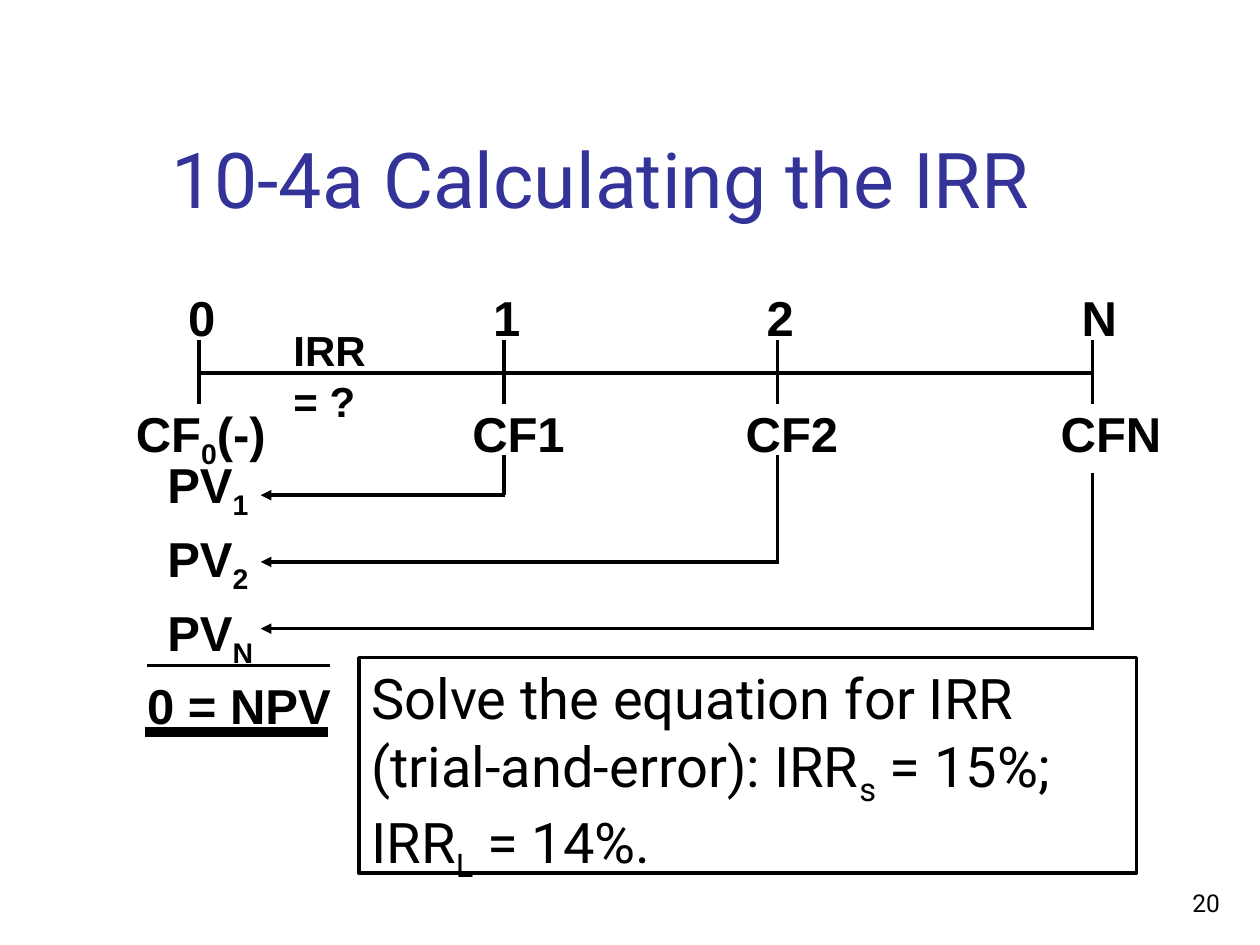
from collections import namedtuple

from lxml.etree import SubElement
from pptx import Presentation
from pptx.dml.color import RGBColor
from pptx.enum.shapes import MSO_CONNECTOR, MSO_SHAPE
from pptx.enum.text import MSO_ANCHOR, PP_ALIGN
from pptx.oxml.ns import qn
from pptx.util import Inches, Pt

COLORS = {"ink": "000000", "title": "333399"}
COLUMNS, ROWS = 100, 75
CELL = Inches(0.1)
TICKS = (0, 24.2, 45.9, 70.9)

Box = namedtuple("Box", "left top width height")


def grid(*cells):
    """Turn counts of grid cells into lengths."""
    return [round(cell * CELL) for cell in cells]


def color(name):
    """Look up a palette colour."""
    return RGBColor.from_string(COLORS[name])


def write(shape, spans, size, font="Arial", bold=False, ink="ink", wrap=False,
          align=PP_ALIGN.LEFT, anchor=MSO_ANCHOR.TOP):
    """Fill a shape with one paragraph whose every second span is a subscript."""
    frame = shape.text_frame
    frame.word_wrap = wrap
    frame.vertical_anchor = anchor
    para = frame.paragraphs[0]
    para.alignment = align
    for index, words in enumerate(spans):
        span = para.add_run()
        span.text = words
        if index % 2:
            span._r.get_or_add_rPr().set("baseline", "-25000")
    para.font.name = font
    para.font.size = Pt(size)
    para.font.bold = bold
    para.font.color.rgb = color(ink)


def add_text(page, box, *spans, size=28, **style):
    """Add a text box on the grid."""
    write(page.shapes.add_textbox(*grid(*box)), spans, size, **style)


def add_label(page, left, top, width, *spans, **style):
    """Add a bold diagram label."""
    add_text(page, Box(left, top, width, 5.6), *spans, bold=True, **style)


def add_line(page, start, end, weight=2, arrow=False):
    """Draw a straight line, with an arrowhead at its end if asked."""
    line = page.shapes.add_connector(MSO_CONNECTOR.STRAIGHT, *grid(*start, *end))
    line.line.color.rgb = color("ink")
    line.line.width = Pt(weight)
    if arrow:
        SubElement(line.line._get_or_add_ln(), qn("a:tailEnd"), type="triangle")
    SubElement(line._element.spPr, qn("a:effectLst"))


def add_timeline(page, box):
    """Draw the time axis with its periods, cash flows and rate."""
    axis = box.top + 7.3
    add_line(page, (box.left, axis), (box.left + box.width, axis))
    periods = ("0", "1", "2", "N")
    flows = (("CF", "0", "(-)"), ("CF1",), ("CF2",), ("CFN",))
    for offset, period, flow in zip(TICKS, periods, flows):
        tick = box.left + offset
        add_line(page, (tick, axis - 2.6), (tick, axis + 2.5))
        add_label(page, tick - 1.85, box.top, 4.1, period)
        shift, width = (6, 14) if offset == 0 else (3.5, 10.5)
        add_label(page, tick - shift, box.top + 9.2, width, *flow)
    add_label(page, box.left + 6.5, box.top + 3, 13.5, "IRR = ?", size=24, wrap=True)


def add_present_values(page, box):
    """Bring each cash flow back to a present value and total them."""
    drops = (0.5, 0.5, 1.9)
    for index, (offset, drop, name) in enumerate(zip(TICKS[1:], drops, "12N")):
        column = box.left + 3.5 + offset
        row = box.top + 3.7 + 5.3 * index
        add_line(page, (column, box.top + drop), (column, row))
        add_line(page, (column + 0.1, row), (box.left + 8.4, row), arrow=True)
        add_label(page, box.left, box.top + 5.85 * index, 9.1, "PV", name)
    add_line(page, (box.left - 0.6, box.top + 17.2), (box.left + 13.9, box.top + 17.2))
    add_label(page, box.left - 1.6, box.top + 17.5, 17, "0 = NPV")
    add_line(page, (box.left - 0.8, box.top + 22.5),
             (box.left + 13.7, box.top + 22.5), weight=6)


def add_solution(page, box):
    """Frame the instruction with its two results."""
    frame = page.shapes.add_shape(MSO_SHAPE.RECTANGLE, *grid(*box))
    frame.shadow.inherit = False
    frame.fill.background()
    frame.line.color.rgb = color("ink")
    frame.line.width = Pt(2)
    spans = ("Solve the equation for IRR (trial-and-error): IRR", "s",
             " = 15%; IRR", "L", " = 14%.")
    write(frame, spans, 32, font="Roboto", wrap=True)


def main():
    """Build the slide and save it."""
    deck = Presentation()
    deck.slide_width, deck.slide_height = grid(COLUMNS, ROWS)
    page = deck.slides.add_slide(deck.slide_layouts[6])
    add_text(page, Box(12.6, 2.3, 85.2, 16), "10-4a Calculating the IRR", size=44,
             font="Roboto", ink="title", wrap=True, anchor=MSO_ANCHOR.BOTTOM)
    add_timeline(page, Box(15.8, 22.3, 70.9, 14.8))
    add_present_values(page, Box(12.3, 35.6, 74.5, 23))
    add_solution(page, Box(28.5, 52.2, 61.7, 17.1))
    add_text(page, Box(77, 68.3, 20.8, 5), "20", size=14, font="Roboto", wrap=True,
             align=PP_ALIGN.RIGHT, anchor=MSO_ANCHOR.BOTTOM)
    deck.save("out.pptx")


if __name__ == "__main__":
    main()
